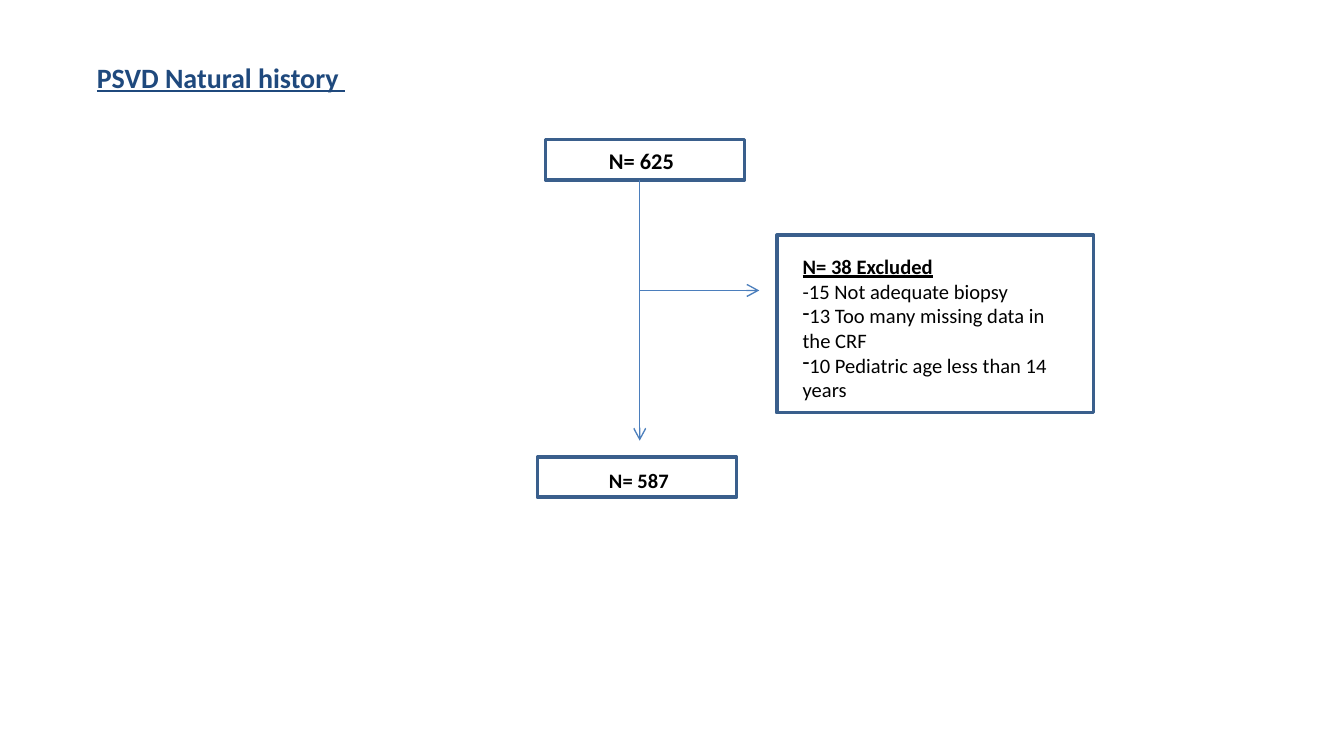
from lxml.etree import SubElement
from pptx import Presentation
from pptx.dml.color import RGBColor
from pptx.enum.shapes import MSO_CONNECTOR as CONNECTOR, MSO_SHAPE as SHAPE
from pptx.enum.text import MSO_AUTO_SIZE as AUTO_SIZE, MSO_ANCHOR as ANCHOR
from pptx.oxml.ns import qn
from pptx.util import Cm, Pt

BLACK = RGBColor(0x00, 0x00, 0x00)
NAVY = RGBColor(0x1F, 0x49, 0x7D)
BORDER = RGBColor(0x3A, 0x5F, 0x8C)
ARROW = RGBColor(0x4B, 0x7E, 0xBC)

HEADING = {"bold": True, "underline": True}
STEM_X = 12.09
BRANCH_Y = 5.49


def add_box(s, x, y, w, h):
    box = s.shapes.add_shape(SHAPE.RECTANGLE, Cm(x), Cm(y), Cm(w), Cm(h))
    box.shadow.inherit = False
    box.fill.background()
    box.line.color.rgb = BORDER
    box.line.width = Pt(2)


def add_arrow(s, x1, y1, x2, y2):
    line = s.shapes.add_connector(CONNECTOR.STRAIGHT, Cm(x1), Cm(y1), Cm(x2), Cm(y2))
    line.line.color.rgb = ARROW
    line.line.width = Pt(0.75)
    SubElement(line.line._get_or_add_ln(), qn("a:tailEnd"), type="arrow")
    SubElement(line._element.spPr, qn("a:effectLst"))


def add_dash(p):
    """Give the paragraph a dash bullet with no hanging indent."""
    pPr = p._p.get_or_add_pPr()
    pPr.set("marL", "0")
    pPr.set("indent", "0")
    SubElement(pPr, qn("a:buChar"), char="-")


def add_text(s, x, y, w, h, lines, size, color=BLACK, wrap=True):
    """Add a text box; each line is (text, font format, bulleted)."""
    tf = s.shapes.add_textbox(Cm(x), Cm(y), Cm(w), Cm(h)).text_frame
    frame = {
        "word_wrap": wrap, "auto_size": AUTO_SIZE.NONE, "vertical_anchor": ANCHOR.TOP,
        "margin_left": Cm(0.18), "margin_right": Cm(0.18),
        "margin_top": Cm(0.1), "margin_bottom": Cm(0.1),
    }
    for name, value in frame.items():
        setattr(tf, name, value)
    for i, (text, style, bulleted) in enumerate(lines):
        p = tf.add_paragraph() if i else tf.paragraphs[0]
        if bulleted:
            add_dash(p)
        r = p.add_run()
        r.text = text
        for name, value in {"name": "Calibri", "size": Pt(size), **style}.items():
            setattr(r.font, name, value)
        r.font.color.rgb = color


def main():
    prs = Presentation()
    prs.slide_width, prs.slide_height = Cm(25.4), Cm(14.29)
    s = prs.slides.add_slide(prs.slide_layouts[6])

    add_text(s, 1.65, 1.04, 12.7, 0.84,
             [("PSVD Natural history ", HEADING, False)], 15, NAVY)

    counts = [
        ("N= 625", 10.31, 2.64, 2.69, 12),
        ("N= 587", 10.16, 8.64, 8.74, 11),
    ]
    for label, x, y, text_y, size in counts:
        add_box(s, x, y, 3.76, 0.76)
        add_text(s, 11.33, text_y, 1.6, 0.7,
                 [(label, {"bold": True}, False)], size, wrap=False)

    add_box(s, 14.68, 4.45, 5.99, 3.35)
    add_text(s, 14.99, 4.7, 5.41, 3.84, [
        ("N= 38 Excluded", HEADING, False),
        ("-15 Not adequate biopsy", {}, False),
        ("13 Too many missing data in the CRF", {}, True),
        ("10 Pediatric age less than 14 years", {}, True),
    ], 11)

    add_arrow(s, STEM_X, 3.4, STEM_X, 8.33)
    add_arrow(s, STEM_X, BRANCH_Y, 14.35, BRANCH_Y)

    prs.save("out.pptx")


if __name__ == "__main__":
    main()
